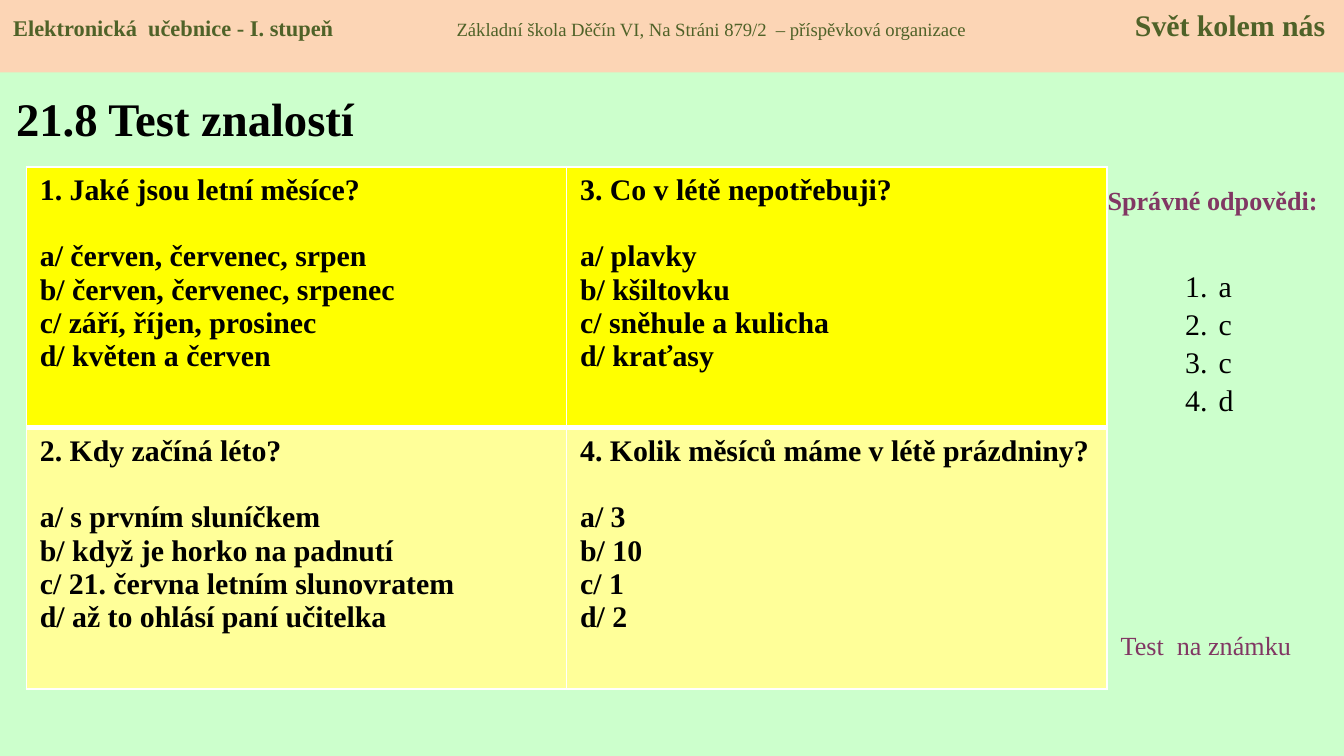
import pptx
import pptx.util
import pptx.dml.color
import pptx.enum.shapes
import pptx.enum.text
import pptx.oxml
from lxml import etree

Cm = pptx.util.Cm
Pt = pptx.util.Pt
COLORS = {
    "background": "CCFFCC",
    "band": "FCD5B5",
    "band_text": "4F6228",
    "text": "000000",
    "accent": "813763",
    "top_row": "FFFF00",
    "bottom_row": "FFFF99",
    "border": "FFFFFF",
}
NAMESPACE = "http://schemas.openxmlformats.org/drawingml/2006/main"


def set_font(font, size, color, bold=False):
    font.name = "Times New Roman"
    font.size = Pt(size)
    font.bold = bold
    font.color.rgb = pptx.dml.color.RGBColor.from_string(COLORS[color])


def fill_solid(fill, color):
    fill.solid()
    fill.fore_color.rgb = pptx.dml.color.RGBColor.from_string(COLORS[color])


deck = pptx.Presentation()
deck.slide_width = Cm(25.4)
deck.slide_height = Cm(14.28)
page = deck.slides.add_slide(deck.slide_layouts[5])
fill_solid(page.background.fill, "background")

# Title
title = page.shapes.title
title.left, title.top, title.width, title.height = Cm(0.05), Cm(1.4), Cm(8.1), Cm(1.65)
title.text_frame.text = "21.8 Test znalostí"
title.text_frame.auto_size = pptx.enum.text.MSO_AUTO_SIZE.NONE
title.text_frame.vertical_anchor = pptx.enum.text.MSO_ANCHOR.MIDDLE
para = title.text_frame.paragraphs[0]
para.alignment = pptx.enum.text.PP_ALIGN.LEFT
set_font(para.font, 25, "text", True)

# Table of questions
questions = [
    [
        ["1. Jaké jsou letní měsíce?", "a/ červen, červenec, srpen", "b/ červen, červenec, srpenec",
         "c/ září, říjen, prosinec", "d/ květen a červen"],
        ["3. Co v létě nepotřebuji?", "a/ plavky", "b/ kšiltovku",
         "c/ sněhule a kulicha", "d/ kraťasy"],
    ],
    [
        ["2. Kdy začíná léto?", "a/ s prvním sluníčkem", "b/ když je horko na padnutí",
         "c/ 21. června letním slunovratem", "d/ až to ohlásí paní učitelka"],
        ["4. Kolik měsíců máme v létě prázdniny?", "a/ 3", "b/ 10", "c/ 1", "d/ 2"],
    ],
]
table = page.shapes.add_table(2, 2, Cm(0.5), Cm(3.15), Cm(20.42), Cm(9.86)).table
table.first_row = False
table.horz_banding = False
for row, row_questions in enumerate(questions):
    for column, lines in enumerate(row_questions):
        cell = table.cell(row, column)
        widths = {"lnL": 1, "lnR": 1, "lnT": 3 if row else 1, "lnB": 1 if row else 3}
        for side, width in widths.items():
            cell._tc.get_or_add_tcPr().append(pptx.oxml.parse_xml(
                f'<a:{side} xmlns:a="{NAMESPACE}" w="{Pt(width)}"><a:solidFill>'
                f'<a:srgbClr val="{COLORS["border"]}"/></a:solidFill></a:{side}>'))
        fill_solid(cell.fill, "bottom_row" if row else "top_row")
        cell.text_frame.text = "\n".join(lines)
        for para in cell.text_frame.paragraphs:
            set_font(para.font, 16, "text", True)
        cell.text_frame.paragraphs[0].space_after = Pt(18)

# Labels beside the table
labels = [
    ("Správné odpovědi:", 20.52, 3.35, 4.8, True, pptx.enum.text.PP_ALIGN.CENTER),
    ("Test  na známku", 20.93, 11.76, 4, False, pptx.enum.text.PP_ALIGN.LEFT),
]
for text, left, top, width, bold, alignment in labels:
    box = page.shapes.add_textbox(Cm(left), Cm(top), Cm(width), Cm(0.86))
    box.text_frame.word_wrap = True
    box.text_frame.text = text
    para = box.text_frame.paragraphs[0]
    para.alignment = alignment
    set_font(para.font, 14, "accent", bold)

# Numbered answers
answers = page.shapes.add_textbox(Cm(22.15), Cm(4.19), Cm(1.4), Cm(5.05))
answers.text_frame.word_wrap = True
answers.text_frame.margin_top = Cm(0.86)
answers.text_frame.margin_right = 0
answers.text_frame.text = "a\nc\nc\nd"
for para in answers.text_frame.paragraphs:
    set_font(para.font, 16, "text")
    para.space_after = Pt(1.3)
    properties = para._p.get_or_add_pPr()
    properties.set("marL", str(Cm(0.63)))
    properties.set("indent", str(-Cm(0.63)))
    numbering = pptx.oxml.parse_xml(f'<a:buAutoNum xmlns:a="{NAMESPACE}" type="arabicPeriod"/>')
    properties.find(f"{{{NAMESPACE}}}defRPr").addprevious(numbering)

# Header band, its three parts set on tab stops
band = page.shapes.add_shape(
    pptx.enum.shapes.MSO_SHAPE.RECTANGLE, 0, 0, deck.slide_width, Cm(1.37))
band.shadow.inherit = False
fill_solid(band.fill, "band")
band.line.fill.background()
band.text_frame.vertical_anchor = pptx.enum.text.MSO_ANCHOR.TOP
para = band.text_frame.paragraphs[0]
para.alignment = pptx.enum.text.PP_ALIGN.LEFT
stops = etree.SubElement(para._p.get_or_add_pPr(), f"{{{NAMESPACE}}}tabLst")
for position in (8.38, 21.2):
    etree.SubElement(stops, f"{{{NAMESPACE}}}tab", pos=str(Cm(position)), algn="l")
parts = [
    ("Elektronická  učebnice - I. stupeň\t", 12, True),
    ("Základní škola Děčín VI, Na Stráni 879/2  – příspěvková organizace\t", 10, False),
    ("Svět kolem nás", 16, True),
]
for text, size, bold in parts:
    span = para.add_run()
    span.text = text
    set_font(span.font, size, "band_text", bold)

deck.save("out.pptx")
